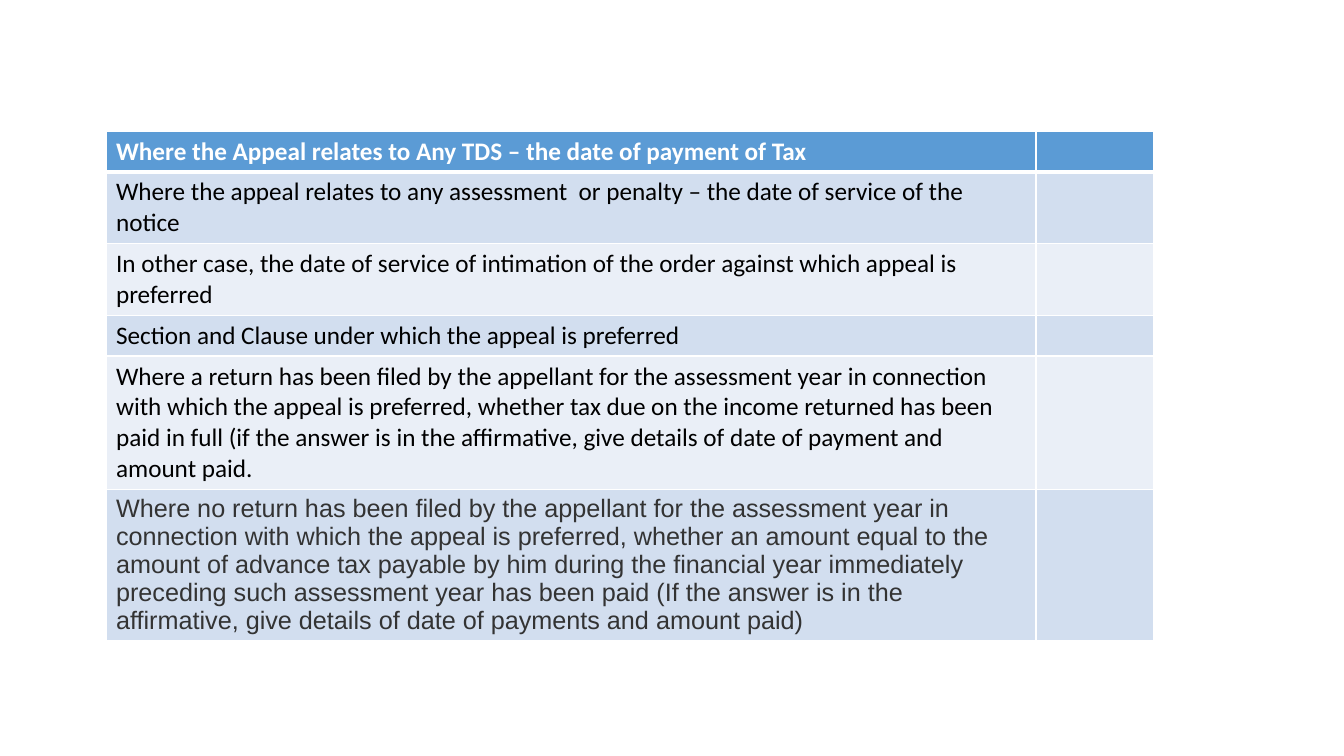
import dataclasses

import pptx
import pptx.dml.color
import pptx.oxml
import pptx.oxml.ns
import pptx.table
import pptx.util

SCALE = 914400 / 100.8
WIDTHS = (930, 118)
BANDS = ("D2DEEF", "EAEFF7")
WHITE = "FFFFFF"


@dataclasses.dataclass
class Entry:
    text: str
    height: int
    face: str = "Calibri"
    ink: str = "000000"
    bold: bool = False


ENTRIES = [
    Entry("Where the Appeal relates to Any TDS – the date of payment of Tax",
          37, ink=WHITE, bold=True),
    Entry("Where the appeal relates to any assessment  or penalty – the date "
          "of service of the notice", 65),
    Entry("In other case, the date of service of intimation of the order "
          "against which appeal is preferred", 65),
    Entry("Section and Clause under which the appeal is preferred", 37),
    Entry("Where a return has been filed by the appellant for the assessment "
          "year in connection with which the appeal is preferred, whether tax "
          "due on the income returned has been paid in full (if the answer is "
          "in the affirmative, give details of date of payment and amount "
          "paid.", 122),
    Entry("Where no return has been filed by the appellant for the assessment "
          "year in connection with which the appeal is preferred, whether an "
          "amount equal to the amount of advance tax payable by him during "
          "the financial year immediately preceding such assessment year has "
          "been paid (If the answer is in the affirmative, give details of "
          "date of payments and amount paid)", 150, face="Arial", ink="333333"),
]


def px(count: int) -> pptx.util.Emu:
    return pptx.util.Emu(round(count * SCALE))


def tint(code: str) -> pptx.dml.color.RGBColor:
    return pptx.dml.color.RGBColor.from_string(code)


def edge(cell: pptx.table._Cell, side: str, points: int) -> None:
    cell._tc.get_or_add_tcPr().append(pptx.oxml.parse_xml(
        f'<a:ln{side} {pptx.oxml.ns.nsdecls("a")} w="{pptx.util.Pt(points)}">'
        f'<a:solidFill><a:srgbClr val="{WHITE}"/></a:solidFill></a:ln{side}>'))


def paint(cell: pptx.table._Cell, index: int) -> None:
    heavy = {0: "B", 1: "T"}.get(index)
    for side in "LRTB":
        edge(cell, side, 3 if side == heavy else 1)
    cell.fill.solid()
    cell.fill.fore_color.rgb = tint(BANDS[(index - 1) % 2] if index else "5B9BD5")


def write(cell: pptx.table._Cell, entry: Entry) -> None:
    run = cell.text_frame.paragraphs[0].add_run()
    run.text = entry.text
    style = {"name": entry.face, "size": pptx.util.Pt(18), "bold": entry.bold}
    for name, value in style.items():
        setattr(run.font, name, value)
    run.font.color.rgb = tint(entry.ink)


def main() -> None:
    deck = pptx.Presentation()
    deck.slide_width, deck.slide_height = px(1344), px(756)
    slide = deck.slides.add_slide(deck.slide_layouts[6])
    frame = slide.shapes.add_table(len(ENTRIES), len(WIDTHS), px(106), px(131),
                                   px(sum(WIDTHS)), px(514))
    table = frame.table
    for column, width in zip(table.columns, WIDTHS):
        column.width = px(width)
    for index, (row, entry) in enumerate(zip(table.rows, ENTRIES)):
        row.height = px(entry.height)
        for cell in row.cells:
            paint(cell, index)
        write(row.cells[0], entry)
    frame.height = px(514)
    deck.save("out.pptx")


if __name__ == "__main__":
    main()
